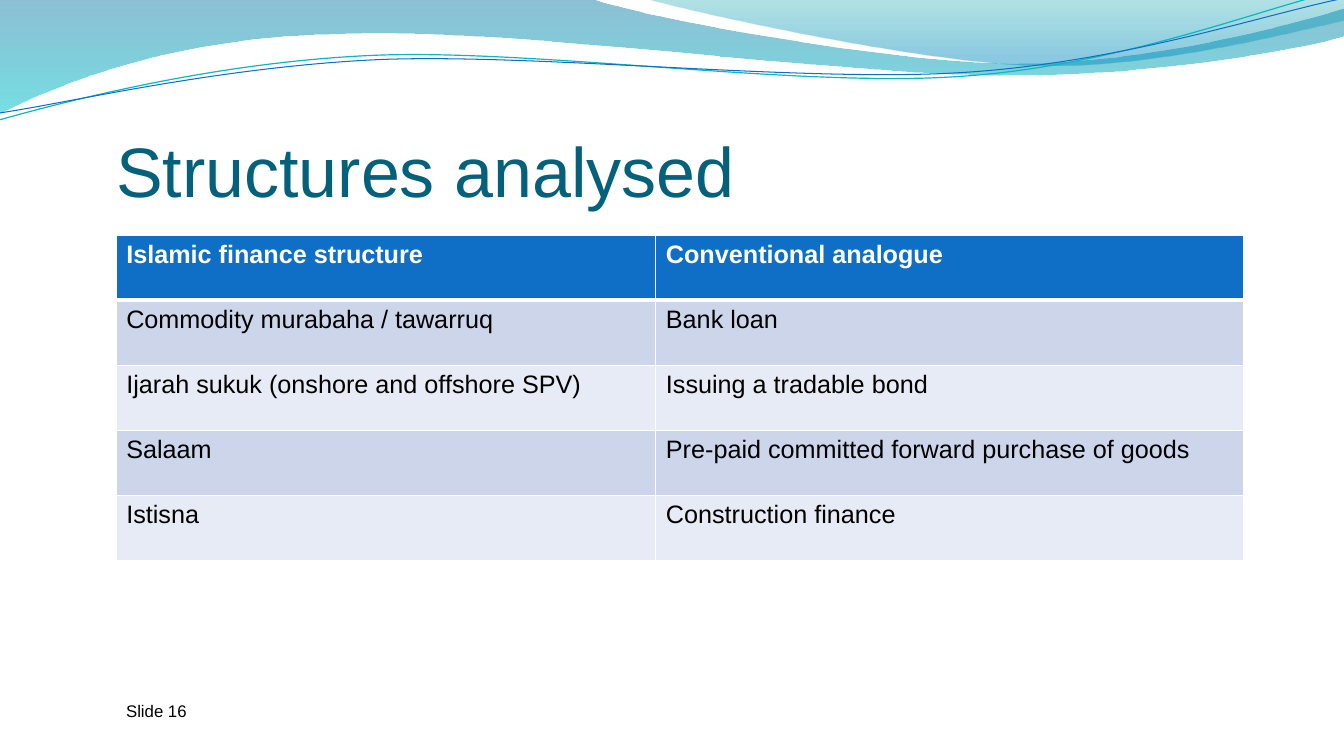
"""Build the slide on Islamic finance structures and their conventional analogues."""
from typing import NamedTuple

import lxml.etree
import pptx
import pptx.dml.color
import pptx.enum.text
import pptx.oxml.ns
import pptx.shapes.autoshape
import pptx.slide
import pptx.table
import pptx.text.text
import pptx.util

Point = tuple[float, float]
FONT = "Arial"
LEFT = 83
COLORS = {
    "title": "04617B", "header": "0F6FC6", "odd_row": "CCD5EA", "even_row": "E7EBF5",
    "white": "FFFFFF", "black": "000000", "deep_blue": "0074A1", "cyan": "00C6CF",
    "sea_green": "00A1A9", "sky_blue": "008BBF", "teal": "0AB8BF",
}


class Stop(NamedTuple):
    """A gradient stop with its position and opacity from 0 to 1."""
    position: float
    color: str
    opacity: float


class Wave(NamedTuple):
    """A filled outline of lines (one point) and Bezier curves (three points)."""
    start: Point
    segments: list[list[Point]]
    stops: list[Stop]


class Strand(NamedTuple):
    """A thin open line of Bezier curves."""
    start: Point
    segments: list[list[Point]]
    color: str
    width: float


class Label(NamedTuple):
    """A text box; insets run left, top, right, bottom."""
    text: str
    box: tuple[float, float, float, float]
    size: float
    color: str
    insets: tuple[float, float, float, float]
    anchor: pptx.enum.text.MSO_ANCHOR


WAVES = [
    Wave((0, 0), [
        [(422.6, -0.7)],
        [(456.5, 12.2), (637.2, 45.4), (727.9, 45.4)],
        [(819.4, 45.4), (920.2, 18.7), (959.8, 6.5)],
        [(961.2, 25.9)],
        [(943.9, 31.7), (835.2, 54.7), (715.7, 54)],
        [(596.9, 54), (366.5, 20.2), (247, 24.5)],
        [(123.8, 25.9), (43.9, 59.8), (-0.7, 81.4)],
        [(0, 0)],
    ], [Stop(0, "deep_blue", 0.45), Stop(1, "cyan", 0.55)]),
    Wave((460.1, -0.7), [
        [(488.9, 7.9), (654.5, 44.6), (738, 46.8)],
        [(821.5, 49.7), (923, 23), (959.8, 15.1)],
        [(959.8, 0)],
        [(460.1, -0.7)],
    ], [Stop(0, "sea_green", 0.3), Stop(0.8, "sky_blue", 0.45)]),
]
STRANDS = [
    Strand((-0.7, 85.7), [
        [(46.1, 72.7), (151.9, 44.6), (265.7, 39.6)],
        [(379.4, 34.6), (568.8, 62.6), (684, 54.7)],
        [(799.2, 47.5), (901.4, 5.8), (958.3, -7.2)],
    ], "teal", 0.85),
    Strand((0, 80.6), [
        [(45.4, 74.2), (157, 47.5), (272.2, 42.5)],
        [(386.6, 38.2), (573.1, 59), (687.6, 51.8)],
        [(802.8, 44.6), (903.6, 10.1), (960.5, -1.4)],
    ], "header", 0.75),
]
LABELS = [
    Label("Structures analysed", (LEFT, 82.8, 648, 68.4), 50, "title",
          (0, 3.6, 0, 0), pptx.enum.text.MSO_ANCHOR.BOTTOM),
    Label("Slide 16", (LEFT, 496.8, 167.8, 28.8), 12, "black",
          (7.2, 3.6, 7.2, 3.6), pptx.enum.text.MSO_ANCHOR.TOP),
]
STRUCTURES = [
    ("Islamic finance structure", "Conventional analogue"),
    ("Commodity murabaha / tawarruq", "Bank loan"),
    ("Ijarah sukuk (onshore and offshore SPV)", "Issuing a tradable bond"),
    ("Salaam", "Pre-paid committed forward purchase of goods"),
    ("Istisna", "Construction finance"),
]
COLUMN_WIDTHS = (385.5, 419.6)
ROW_HEIGHT = 46.5


def rgb(name: str) -> pptx.dml.color.RGBColor:
    """Look up a colour by name."""
    return pptx.dml.color.RGBColor.from_string(COLORS[name])


def draw_outline(slide: pptx.slide.Slide, ribbon: Wave | Strand,
                 close: bool) -> pptx.shapes.autoshape.Shape:
    """Draw a freeform, bending each three-point segment into a Bezier curve."""
    builder = slide.shapes.build_freeform(*map(pptx.util.Pt, ribbon.start))
    builder.add_line_segments(
        [tuple(map(pptx.util.Pt, point)) for segment in ribbon.segments for point in segment],
        close=close)
    shape = builder.convert_to_shape()
    shape.shadow.inherit = False
    steps = iter(list(shape._element.iter(pptx.oxml.ns.qn("a:lnTo"))))
    for segment in ribbon.segments:
        first, *others = [next(steps) for _ in segment]
        if others:
            curve = lxml.etree.Element(pptx.oxml.ns.qn("a:cubicBezTo"))
            first.addprevious(curve)
            for step in (first, *others):
                curve.append(step[0])
                step.getparent().remove(step)
    return shape


def draw_wave(slide: pptx.slide.Slide, wave: Wave) -> None:
    """Draw a wave and fill it from top to bottom."""
    shape = draw_outline(slide, wave, close=True)
    shape.line.fill.background()
    shape.fill.gradient()
    shape.fill.gradient_angle = 270
    for gradient_stop, stop in zip(shape.fill.gradient_stops, wave.stops):
        gradient_stop.position = stop.position
        gradient_stop.color.rgb = rgb(stop.color)
    for tint, stop in zip(shape._element.iter(pptx.oxml.ns.qn("a:srgbClr")), wave.stops):
        alpha = lxml.etree.SubElement(tint, pptx.oxml.ns.qn("a:alpha"))
        alpha.set("val", str(round(stop.opacity * 100000)))


def draw_strand(slide: pptx.slide.Slide, strand: Strand) -> None:
    """Draw a thin curved line."""
    shape = draw_outline(slide, strand, close=False)
    shape.fill.background()
    shape.line.color.rgb = rgb(strand.color)
    shape.line.width = pptx.util.Pt(strand.width)


def style_text(frame: pptx.text.text.TextFrame, size: float, color: str, bold: bool) -> None:
    """Format the only run of a text frame."""
    font = frame.paragraphs[0].runs[0].font
    font.name, font.size, font.bold = FONT, pptx.util.Pt(size), bold
    font.color.rgb = rgb(color)


def draw_label(slide: pptx.slide.Slide, label: Label) -> None:
    """Draw a text box."""
    frame = slide.shapes.add_textbox(*map(pptx.util.Pt, label.box)).text_frame
    frame.word_wrap = True
    frame.vertical_anchor = label.anchor
    (frame.margin_left, frame.margin_top,
     frame.margin_right, frame.margin_bottom) = map(pptx.util.Pt, label.insets)
    frame.text = label.text
    style_text(frame, label.size, label.color, bold=False)


def add_borders(cell: pptx.table._Cell, top: float, bottom: float) -> None:
    """Give a cell white borders, the side ones one point wide."""
    properties = cell._tc.get_or_add_tcPr()
    for side, width in {"L": 1, "R": 1, "T": top, "B": bottom}.items():
        border = lxml.etree.SubElement(properties, pptx.oxml.ns.qn(f"a:ln{side}"))
        border.set("w", str(pptx.util.Pt(width)))
        fill = lxml.etree.SubElement(border, pptx.oxml.ns.qn("a:solidFill"))
        lxml.etree.SubElement(fill, pptx.oxml.ns.qn("a:srgbClr")).set("val", COLORS["white"])


def draw_structures(slide: pptx.slide.Slide) -> None:
    """Draw the table of structures and analogues."""
    box = (LEFT, 168, sum(COLUMN_WIDTHS), ROW_HEIGHT * len(STRUCTURES))
    table = slide.shapes.add_table(
        len(STRUCTURES), len(COLUMN_WIDTHS), *map(pptx.util.Pt, box)).table
    for column, width in zip(table.columns, COLUMN_WIDTHS):
        column.width = pptx.util.Pt(width)
    for r, entries in enumerate(STRUCTURES):
        is_header = r == 0
        fill = "header" if is_header else "odd_row" if r % 2 else "even_row"
        for c, entry in enumerate(entries):
            cell = table.cell(r, c)
            add_borders(cell, top=3 if r == 1 else 1, bottom=3 if is_header else 1)
            cell.fill.solid()
            cell.fill.fore_color.rgb = rgb(fill)
            cell.text_frame.text = entry
            style_text(cell.text_frame, 18, "white" if is_header else "black", is_header)


def main() -> None:
    """Build and save the slide."""
    deck = pptx.Presentation()
    deck.slide_width, deck.slide_height = pptx.util.Pt(960), pptx.util.Pt(540)
    slide = deck.slides.add_slide(deck.slide_layouts[6])
    for draw, items in ((draw_wave, WAVES), (draw_strand, STRANDS), (draw_label, LABELS)):
        for item in items:
            draw(slide, item)
    draw_structures(slide)
    deck.save("out.pptx")


if __name__ == "__main__":
    main()
